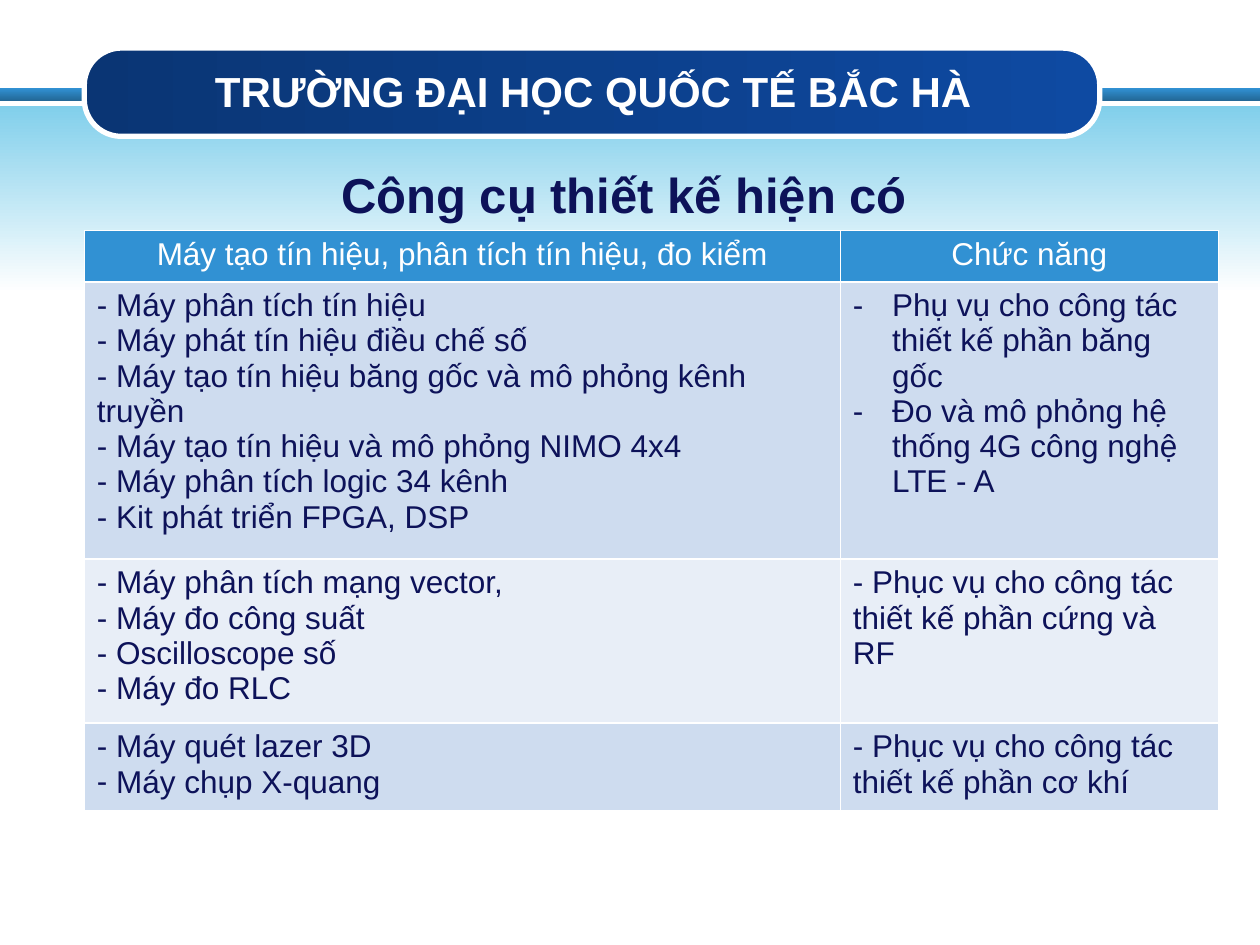
import pptx
import pptx.dml.color
import pptx.enum.shapes
import pptx.enum.text
import pptx.oxml
import pptx.oxml.ns
import pptx.util
from dataclasses import dataclass

Cm = pptx.util.Cm
Pt = pptx.util.Pt
Kind = pptx.enum.shapes.MSO_SHAPE
Align = pptx.enum.text.PP_ALIGN
Anchor = pptx.enum.text.MSO_ANCHOR


@dataclass
class Theme:
    font: str = "Arial"
    ink: str = "0D1259"
    white: str = "FFFFFF"
    blue: str = "3191D3"
    steel: str = "236897"
    navy: str = "0A3574"
    deep: str = "0E4AA2"
    sky: str = "81CFEB"
    bands: tuple = ("CEDCEF", "E8EEF7")
    head: int = 28
    title: int = 24
    body: int = 18


def rgb(code):
    return pptx.dml.color.RGBColor.from_string(code)


def node(tag, **attrs):
    item = pptx.oxml.parse_xml(f"<a:{tag} {pptx.oxml.ns.nsdecls('a')}/>")
    for name, value in attrs.items():
        item.set(name, str(value))
    return item


class Deck:
    def __init__(self, theme):
        self.theme = theme
        self.file = pptx.Presentation()
        self.file.slide_width = Cm(25.4)
        self.file.slide_height = Cm(19.05)
        self.slide = self.file.slides.add_slide(self.file.slide_layouts[6])

    def shape(self, kind, box, start, end, angle):
        """Shape with a two-stop gradient and no outline."""
        item = self.slide.shapes.add_shape(kind, *map(Cm, box))
        item.shadow.inherit = False
        item.line.fill.background()
        item.fill.gradient()
        item.fill.gradient_angle = angle
        for stop, code in zip(item.fill.gradient_stops, (start, end)):
            stop.color.rgb = rgb(code)
        return item

    def style(self, para, size, color, bold=False, align=None):
        para.alignment = align
        for run in para.runs:
            run.font.name = self.theme.font
            run.font.size = Pt(size)
            run.font.bold = bold
            run.font.color.rgb = rgb(color)

    def label(self, text, box, size, color, anchor=Anchor.TOP):
        frame = self.slide.shapes.add_textbox(*map(Cm, box)).text_frame
        frame.word_wrap = True
        frame.vertical_anchor = anchor
        frame.text = text
        self.style(frame.paragraphs[0], size, color, True, Align.CENTER)

    def bullet(self, para, hang):
        props = para._p.get_or_add_pPr()
        if hang:
            props.set("marL", str(Cm(hang)))
            props.set("indent", str(-Cm(hang)))
        props.append(node("buFont", typeface=self.theme.font))
        props.append(node("buChar", char="-"))

    def border(self, cell):
        props = cell._tc.get_or_add_tcPr()
        for side in ("lnL", "lnR", "lnT", "lnB"):
            line = node(side, w=Pt(1))
            fill = node("solidFill")
            fill.append(node("srgbClr", val=self.theme.white))
            line.append(fill)
            props.append(line)

    def cell(self, cell, lines, fill, color, mark=False, hang=0, align=None):
        self.border(cell)
        cell.fill.solid()
        cell.fill.fore_color.rgb = rgb(fill)
        cell.text_frame.text = "\n".join(lines)
        for para in cell.text_frame.paragraphs:
            if mark:
                self.bullet(para, hang)
            self.style(para, self.theme.body, color, align=align)

    def table(self, spot, widths, heights, heads, rows):
        look = self.theme
        size = (sum(widths), sum(heights))
        grid = self.slide.shapes.add_table(
            len(heights), len(widths), *map(Cm, spot + size)).table
        for col, width in zip(grid.columns, widths):
            col.width = Cm(width)
        for row, height in zip(grid.rows, heights):
            row.height = Cm(height)
        for col, text in enumerate(heads):
            self.cell(grid.cell(0, col), [text], look.blue, look.white,
                      align=Align.CENTER)
        for index, (tools, uses, hang) in enumerate(rows):
            fill = look.bands[index % 2]
            self.cell(grid.cell(index + 1, 0), [" " + tool for tool in tools],
                      fill, look.ink, mark=True)
            self.cell(grid.cell(index + 1, 1), uses, fill, look.ink,
                      mark=hang > 0, hang=hang)


def main():
    look = Theme()
    deck = Deck(look)

    # Header backdrop
    deck.shape(Kind.RECTANGLE, (0, 1.78, 25.4, 0.25),
               look.blue, look.steel, 270)
    deck.shape(Kind.RECTANGLE, (0, 2.13, 25.4, 3.78),
               look.sky, look.white, 270)
    bar = deck.shape(Kind.ROUNDED_RECTANGLE, (1.7, 0.97, 20.47, 1.78),
                     look.navy, look.deep, 0)
    bar.adjustments[0] = 0.42
    bar.line.color.rgb = rgb(look.white)
    bar.line.width = Pt(3)

    # Title
    deck.label("TRƯỜNG ĐẠI HỌC QUỐC TẾ BẮC HÀ", (1.52, 1.04, 20.88, 1.57),
               look.title, look.white, Anchor.MIDDLE)

    # Tools table: tools, uses, hanging indent of the uses
    rows = [
        (["Máy phân tích tín hiệu",
          "Máy phát tín hiệu điều chế số",
          "Máy tạo tín hiệu băng gốc và mô phỏng kênh truyền",
          "Máy tạo tín hiệu và mô phỏng NIMO 4x4",
          "Máy phân tích logic 34 kênh",
          "Kit phát triển FPGA, DSP"],
         ["Phụ vụ cho công tác thiết kế phần băng gốc",
          "Đo và mô phỏng hệ thống 4G công nghệ LTE - A"], 0.79),
        (["Máy phân tích mạng vector,", "Máy đo công suất",
          "Oscilloscope số", "Máy đo RLC"],
         ["- Phục vụ cho công tác thiết kế phần cứng và RF"], 0),
        (["Máy quét lazer 3D", "Máy chụp X-quang"],
         ["- Phục vụ cho công tác thiết kế phần cơ khí"], 0),
    ]
    deck.table((1.7, 4.65), (15.24, 7.62), (1.03, 5.2, 3.1, 1.67),
               ("Máy tạo tín hiệu, phân tích tín hiệu, đo kiểm", "Chức năng"),
               rows)

    # Heading above the table
    deck.label("Công cụ thiết kế hiện có", (1.52, 3.2, 22.12, 1.45),
               look.head, look.ink)

    deck.file.save("out.pptx")


if __name__ == "__main__":
    main()
